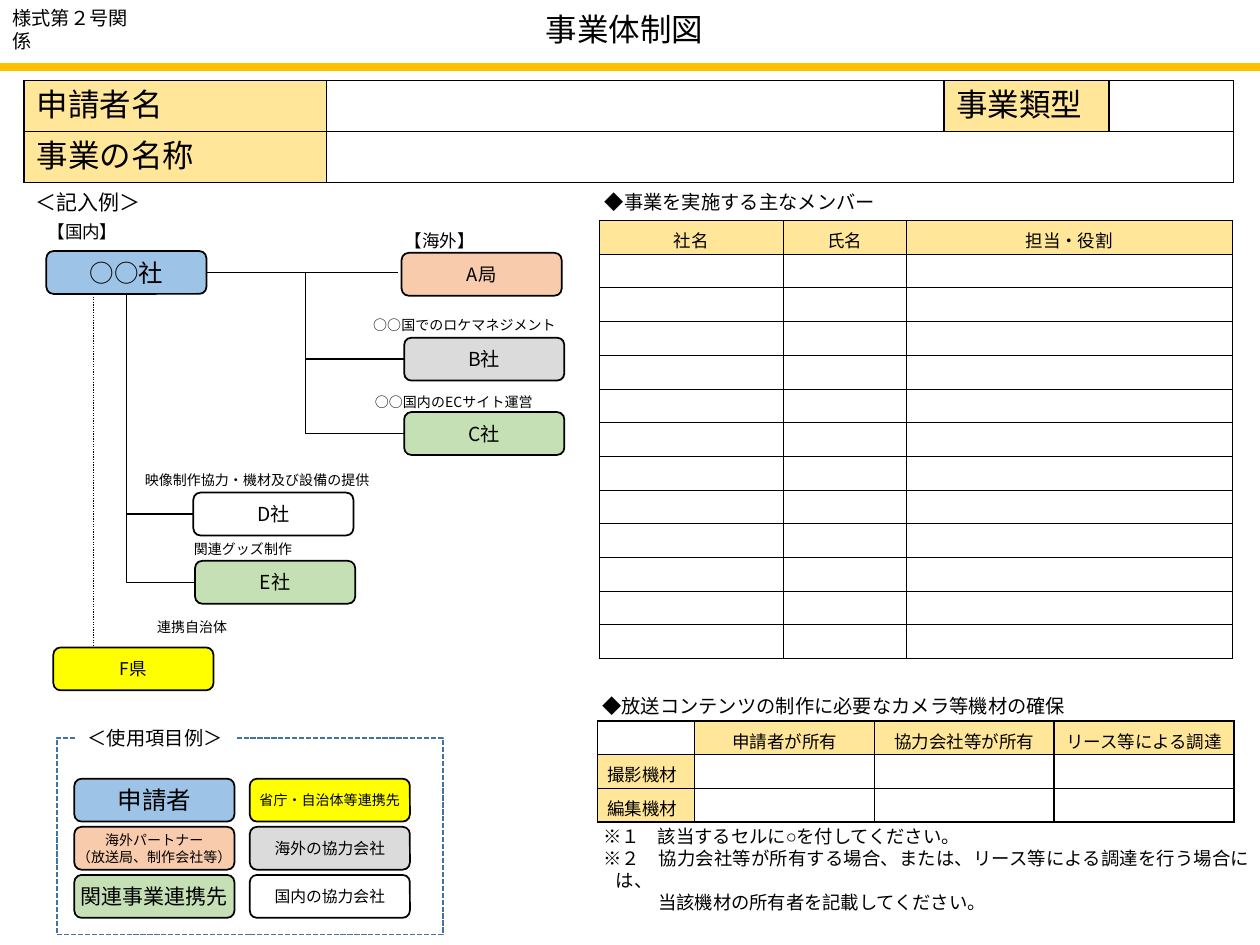
from lxml.etree import SubElement
from pptx import Presentation
from pptx.dml.color import RGBColor
from pptx.enum.dml import MSO_LINE
from pptx.enum.shapes import MSO_CONNECTOR, MSO_SHAPE
from pptx.enum.text import MSO_ANCHOR, PP_ALIGN
from pptx.oxml.ns import qn
from pptx.util import Pt

COLORS = {"black": "000000", "white": "FFFFFF", "gold": "FFC000", "head": "FFE699",
          "blue": "9DC3E6", "peach": "F8CBAD", "green": "C5E0B4", "yellow": "FFFF00",
          "grey": "DBDBDB", "frame": "43739E"}
CJK = "Noto Sans CJK JP"
BOX_W, BOX_H = 91.5, 24.5

TITLE = "事業体制図"
APPLICANT = [["申請者名", "", "事業類型", ""], ["事業の名称", "", "", ""]]
MEMBERS = [["社名", "氏名", "担当・役割"]] + [[""] * 3 for _ in range(12)]
EQUIPMENT = [["", "申請者が所有", "協力会社等が所有", "リース等による調達"],
             ["撮影機材", "", "", ""], ["編集機材", "", "", ""]]
COMPANIES = {
    "applicant": ("○○社", 26.5, 143.5, "blue", 14),
    "D": ("D社", 110.5, 281.5, "white", 11),
    "E": ("E社", 111.5, 320.5, "green", 11),
    "F": ("F県", 30.5, 370, "yellow", 10),
    "A": ("A局", 229.5, 144.5, "peach", 10.5),
    "C": ("C社", 231, 235.5, "green", 11),
    "B": ("B社", 231, 193, "grey", 11),
}
ELBOWS = [("C", 0.5, 3), ("B", 0.5, 3), ("D", None, 2), ("E", None, 2)]
LEGEND = [
    [("申請者", "blue", 14), ("省庁・自治体等連携先", "yellow", 8)],
    [("海外パートナー\n（放送局、制作会社等）", "peach", 8), ("海外の協力会社", "grey", 9)],
    [("関連事業連携先", "green", 12), ("国内の協力会社", "white", 9)],
]
ROLES = [
    ("【国内】", 21.5, 125.5, 73.5, 16.5, 10),
    ("【海外】", 225.5, 130.5, 65.5, 16.5, 10),
    ("○○国でのロケマネジメント", 207.5, 178, 137, 13.5, 8),
    ("○○国内のECサイト運営", 208.5, 222, 130, 13.5, 8),
    ("映像制作協力・機材及び設備の提供", 77, 266.5, 141, 13.5, 8),
    ("関連グッズ制作", 105, 306, 68.5, 13.5, 8),
    ("連携自治体", 84, 350.5, 52.5, 11.5, 8),
]
HEADINGS = [
    ("◆事業を実施する主なメンバー", 338.5, 105, 170, 21, 11, CJK),
    ("◆放送コンテンツの制作に必要なカメラ等機材の確保", 337, 393, 281, 21, 11, CJK),
    ("＜記入例＞", 13.5, 104.5, 75, 21.5, 12, "Calibri"),
]
NOTES = [
    ("※１　該当するセルに○を付してください。", 7.2, -7.2),
    ("※２　協力会社等が所有する場合、または、リース等による調達を行う場合には、", 7.2, -7.2),
    ("当該機材の所有者を記載してください。", 31.5, 0),
]


def rgb(name):
    return RGBColor.from_string(COLORS[name])


def write(tf, text, size, font=CJK, align=PP_ALIGN.LEFT):
    tf.text = text
    for p in tf.paragraphs:
        p.alignment = align
        for r in p.runs:
            r.font.size, r.font.name = Pt(size), font
            r.font.color.rgb = rgb("black")
            SubElement(r.font._element, qn("a:ea"), typeface=font)


def set_insets(obj, left, top, right, bottom):
    obj.margin_left, obj.margin_top = Pt(left), Pt(top)
    obj.margin_right, obj.margin_bottom = Pt(right), Pt(bottom)


def add_rect(s, kind, x, y, w, h, fill=None, line=None):
    sp = s.shapes.add_shape(kind, Pt(x), Pt(y), Pt(w), Pt(h))
    sp.shadow.inherit = False
    if fill:
        sp.fill.solid()
        sp.fill.fore_color.rgb = rgb(fill)
    else:
        sp.fill.background()
    if line:
        sp.line.color.rgb, sp.line.width = rgb(line), Pt(1)
    else:
        sp.line.fill.background()
    return sp


def add_box(s, text, x, y, fill, size):
    sp = add_rect(s, MSO_SHAPE.ROUNDED_RECTANGLE, x, y, BOX_W, BOX_H, fill, "black")
    tf = sp.text_frame
    set_insets(tf, 0, 0, 0, 0)
    tf.vertical_anchor = MSO_ANCHOR.MIDDLE
    write(tf, text, size, align=PP_ALIGN.CENTER)
    return sp


def add_text(s, text, x, y, w, h, size, font=CJK, align=PP_ALIGN.LEFT, wrap=False):
    tf = s.shapes.add_textbox(Pt(x), Pt(y), Pt(w), Pt(h)).text_frame
    tf.word_wrap = wrap
    write(tf, text, size, font, align)
    return tf


def add_line(s, x1, y1, x2, y2, color="black", width=0.75, kind=MSO_CONNECTOR.STRAIGHT):
    c = s.shapes.add_connector(kind, Pt(x1), Pt(y1), Pt(x2), Pt(y2))
    c.line.color.rgb, c.line.width = rgb(color), Pt(width)
    SubElement(c._element.spPr, qn("a:effectLst"))
    return c


def set_borders(cell, width):
    tcPr = cell._tc.get_or_add_tcPr()
    for i, side in enumerate(("lnL", "lnR", "lnT", "lnB")):
        ln = tcPr.makeelement(qn("a:" + side), {"w": str(Pt(width))})
        fill = SubElement(ln, qn("a:solidFill"))
        SubElement(fill, qn("a:srgbClr"), val=COLORS["black"])
        tcPr.insert(i, ln)


def add_grid(s, rows, x, y, widths, height, size, font, border, insets, centred=False):
    gf = s.shapes.add_table(len(rows), len(widths), Pt(x), Pt(y),
                            Pt(sum(widths)), Pt(height * len(rows)))
    tbl = gf.table
    tbl.first_row = tbl.horz_banding = False
    for col, w in zip(tbl.columns, widths):
        col.width = Pt(w)
    for i, row in enumerate(rows):
        tbl.rows[i].height = Pt(height)
        for j, text in enumerate(row):
            cell = tbl.cell(i, j)
            set_insets(cell, *insets)
            if text:
                align = PP_ALIGN.CENTER if centred and i == 0 else PP_ALIGN.LEFT
                write(cell.text_frame, text, size, font, align)
                cell.fill.solid()
                cell.fill.fore_color.rgb = rgb("head")
            else:
                end = SubElement(cell.text_frame.paragraphs[0]._p, qn("a:endParaRPr"))
                end.set("sz", str(size * 100))
                cell.fill.background()
            set_borders(cell, border)
    return tbl


def main():
    """Build the project organisation chart slide."""
    prs = Presentation()
    prs.slide_width, prs.slide_height = Pt(720), Pt(540)
    s = prs.slides.add_slide(prs.slide_layouts[5])
    title = s.shapes.title
    title.left, title.top, title.width, title.height = Pt(304.5), Pt(2), Pt(105), Pt(29)
    title.text_frame.word_wrap = False
    write(title.text_frame, TITLE, 18, align=PP_ALIGN.CENTER)
    add_line(s, 0, 38.25, 720, 38.25, "gold", 4.5)
    add_text(s, "様式第２号関係", 0, 0, 88.5, 21, 11, "Calibri", wrap=True)

    tbl = add_grid(s, APPLICANT, 13.75, 46, [172.8, 352.8, 94.3, 71.3], 29.2, 18,
                   "Calibri", 1, (7.2, 3.6, 7.2, 3.6))
    tbl.cell(1, 1).merge(tbl.cell(1, 3))
    add_grid(s, MEMBERS, 342.5, 126, [105, 70.5, 186], 19.25, 10, CJK, 0.5,
             (6.5, 4, 6.5, 0), True)
    add_grid(s, EQUIPMENT, 341.5, 412, [55.5] + [102.7] * 3, 19.25, 10, CJK, 1,
             (5.5, 4, 5.5, 0), True)

    frame = add_rect(s, MSO_SHAPE.RECTANGLE, 32.5, 421.5, 220.5, 112.5, line="frame")
    frame.line.dash_style = MSO_LINE.SQUARE_DOT
    for i, row in enumerate(LEGEND):
        for j, (text, fill, size) in enumerate(row):
            add_box(s, text, 42.5 + 100.25 * j, 445 + 27.5 * i, fill, size)
    sp = add_rect(s, MSO_SHAPE.RECTANGLE, 43, 411, BOX_W, 21, "white")
    write(sp.text_frame, "＜使用項目例＞", 11, "Calibri")

    boxes = {key: add_box(s, *company) for key, company in COMPANIES.items()}
    applicant = boxes["applicant"]
    mid_y = 143.5 + BOX_H / 2
    add_line(s, 118, mid_y, 227.5, mid_y).begin_connect(applicant, 3)
    dotted = add_line(s, 53.25, 168, 53.25, 370)
    dotted.line.dash_style = MSO_LINE.ROUND_DOT
    for key, _, bends in ELBOWS:
        c = add_line(s, 0, 0, 0, 0, kind=MSO_CONNECTOR.ELBOW)
        c.begin_connect(boxes[key], 1)
        c.end_connect(applicant, 3 if bends == 3 else 0 + 2)
        c._element.spPr.find(qn("a:prstGeom")).set("prst", f"bentConnector{bends}")

    for text, x, y, w, h, size in ROLES:
        tf = add_text(s, text, x, y, w, h, size, align=PP_ALIGN.JUSTIFY)
        set_insets(tf, 5.75, 0.75, 5.75, 0.75)
        tf.paragraphs[0].line_spacing = Pt(12)
    for heading in HEADINGS:
        add_text(s, *heading)

    tf = add_text(s, "\n".join(note[0] for note in NOTES), 339, 468, 381, 32.5, 10.5,
                  "Arial", PP_ALIGN.JUSTIFY, True)
    set_insets(tf, 5.75, 3.6, 5.75, 3.6)
    for p, (_, margin, indent) in zip(tf.paragraphs, NOTES):
        pPr = p._p.get_or_add_pPr()
        pPr.set("marL", str(Pt(margin)))
        pPr.set("indent", str(Pt(indent)))
    prs.save("out.pptx")


if __name__ == "__main__":
    main()
